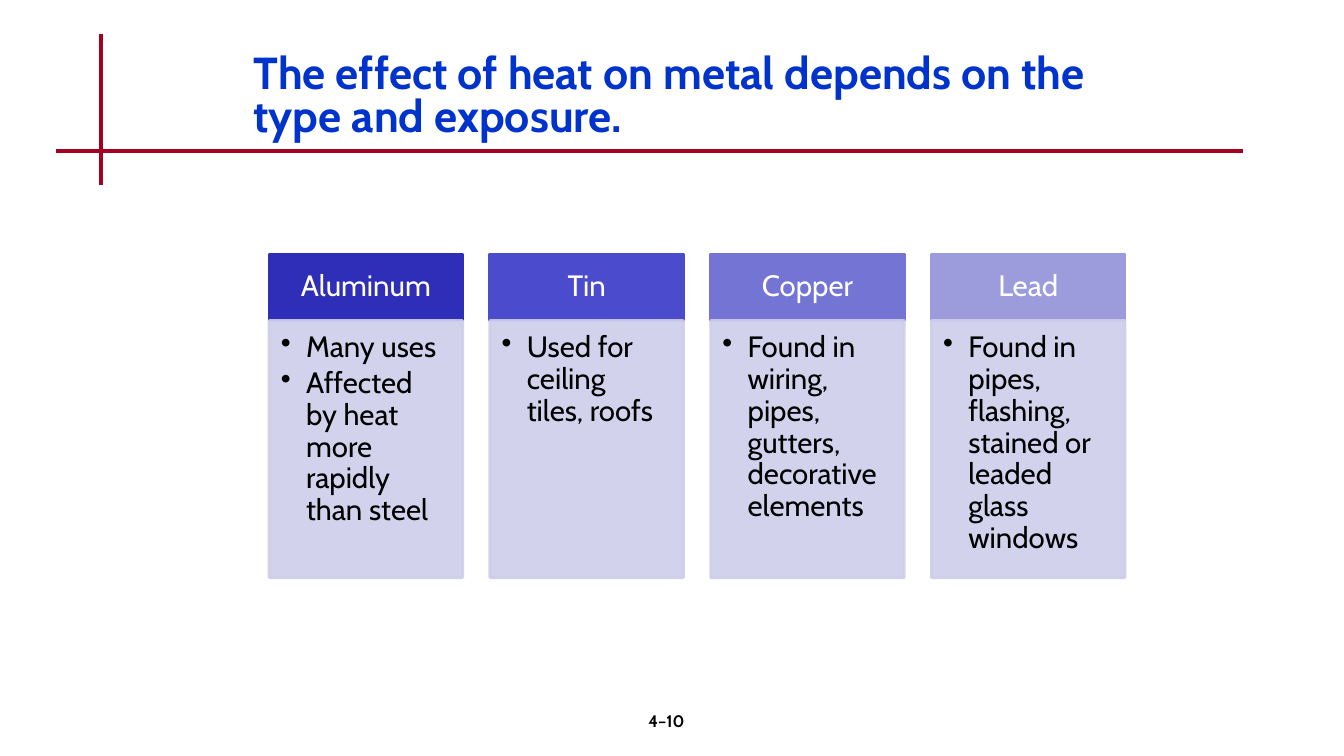
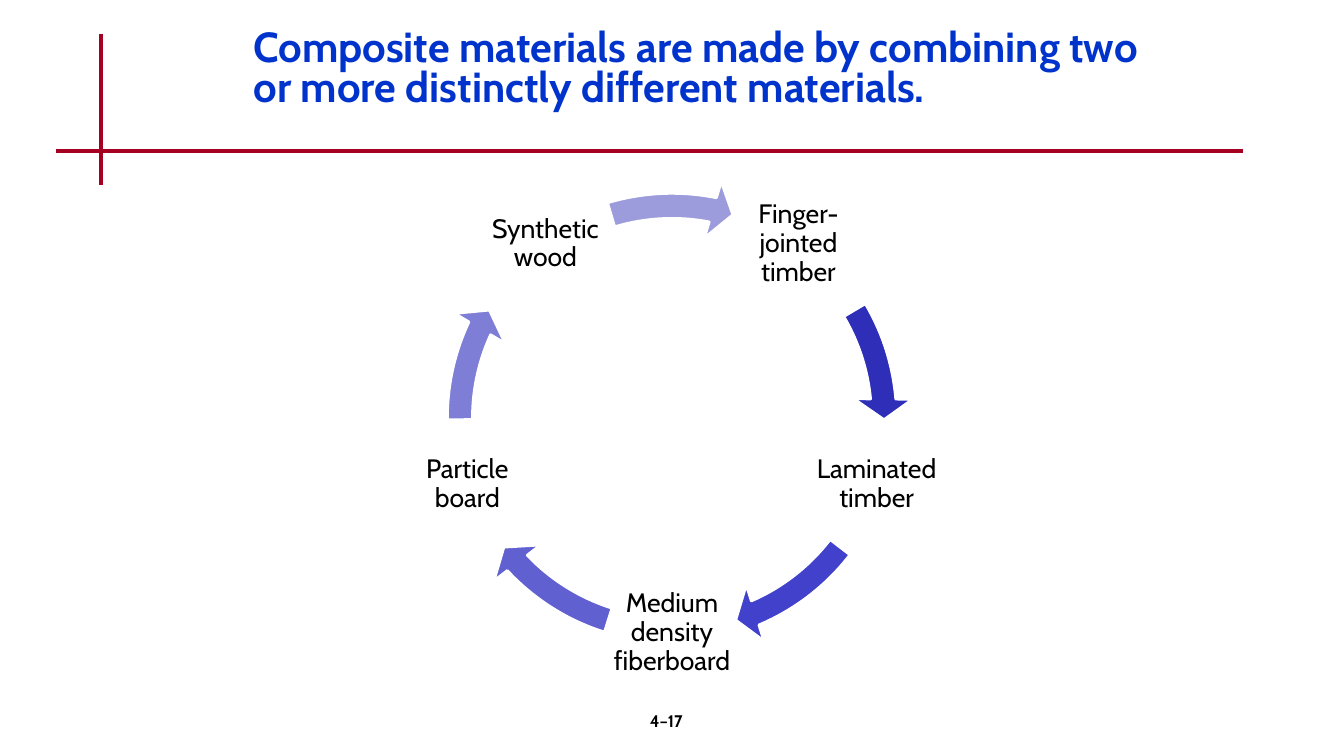
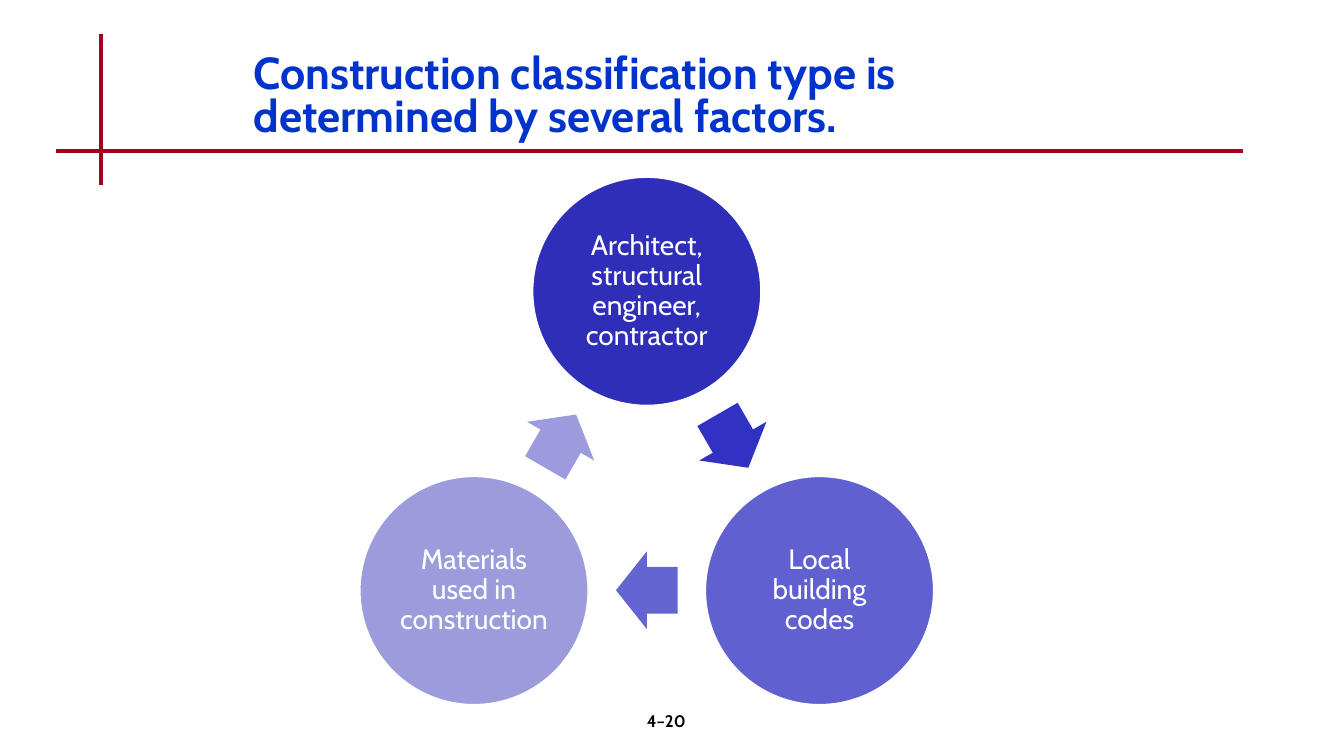
from dataclasses import dataclass
from math import cos, radians, sin

from lxml.etree import SubElement
from pptx import Presentation
from pptx.dml.color import RGBColor
from pptx.enum.shapes import MSO_CONNECTOR, MSO_SHAPE
from pptx.enum.text import MSO_ANCHOR, PP_ALIGN
from pptx.oxml.ns import qn
from pptx.presentation import Presentation as Deck
from pptx.shapes.autoshape import Shape
from pptx.slide import Slide
from pptx.util import Pt

FONT = "Cabin"
COLORS = {
    "title": "0033CC",
    "rule": "A50021",
    "black": "000000",
    "white": "FFFFFF",
    "panel": "CECEEC",
}


@dataclass(frozen=True)
class Box:
    left: float
    top: float
    width: float
    height: float


@dataclass(frozen=True)
class TextStyle:
    size: float
    color: str
    bold: bool = False
    align: PP_ALIGN = PP_ALIGN.CENTER
    anchor: MSO_ANCHOR = MSO_ANCHOR.MIDDLE
    spacing: float = 0.9
    insets: tuple[float, float, float, float] = (2.2, 2.2, 2.2, 2.2)
    bulleted: bool = False


@dataclass(frozen=True)
class Metal:
    name: str
    color: str
    facts: tuple[str, ...]


@dataclass(frozen=True)
class Material:
    name: str
    arrow_color: str
    arrow_start: float
    arrow_end: float


@dataclass(frozen=True)
class Factor:
    name: str
    color: str
    arrow_color: str


RULES = ((72, 24, 72, 132), (40, 108, 888, 108))
PAGE_NUMBER_BOX = Box(376, 504, 200, 36)
DEFAULT_INSETS = (7.2, 3.6, 7.2, 3.6)
PAGE_NUMBER_STYLE = TextStyle(12, COLORS["black"], True, anchor=MSO_ANCHOR.TOP,
                              spacing=1.0, insets=DEFAULT_INSETS)
HEADER_STYLE = TextStyle(21, COLORS["white"], insets=(11.5, 6.5, 11.5, 6.5))
FACTS_STYLE = TextStyle(21, COLORS["black"], align=PP_ALIGN.LEFT,
                        anchor=MSO_ANCHOR.TOP, insets=(8.4, 8.4, 11.5, 13),
                        bulleted=True)
MATERIAL_STYLE = TextStyle(19, COLORS["black"])
FACTOR_STYLE = TextStyle(20, COLORS["white"])

METALS = (
    Metal("Aluminum", "2E2EB9",
          ("Many uses", "Affected by heat more rapidly than steel")),
    Metal("Tin", "4B4BCD", ("Used for ceiling tiles, roofs",)),
    Metal("Copper", "7474D4",
          ("Found in wiring, pipes, gutters, decorative elements",)),
    Metal("Lead", "9C9CDD",
          ("Found in pipes, flashing, stained or leaded glass windows",)),
)
MATERIALS = (
    Material("Finger-jointed timber", "2E2EB9", 329.44, 354.89),
    Material("Laminated timber", "4141CB", 37.56, 66.91),
    Material("Medium density fiberboard", "6060D0", 107.49, 136.85),
    Material("Particle board", "7E7ED6", 179.51, 204.97),
    Material("Synthetic wood", "9C9CDD", 253.31, 281.1),
)
FACTORS = (
    Factor("Architect, structural engineer, contractor", "2E2EB9", "3131C3"),
    Factor("Local building codes", "6060D0", "6464D2"),
    Factor("Materials used in construction", "9C9CDD", "9B9BDD"),
)


def lengths(box: Box) -> tuple[Pt, Pt, Pt, Pt]:
    return Pt(box.left), Pt(box.top), Pt(box.width), Pt(box.height)


def box_on_circle(center: tuple[float, float], radius: float, angle: float,
                  width: float, height: float) -> Box:
    x = center[0] + radius * cos(radians(angle))
    y = center[1] + radius * sin(radians(angle))
    return Box(x - width / 2, y - height / 2, width, height)


def write(shape: Shape, text: str, style: TextStyle) -> None:
    frame = shape.text_frame
    frame.text = text
    frame.word_wrap = True
    frame.vertical_anchor = style.anchor
    (frame.margin_left, frame.margin_top,
     frame.margin_right, frame.margin_bottom) = map(Pt, style.insets)
    for paragraph in frame.paragraphs:
        if style.bulleted:
            add_bullet(paragraph)
            paragraph.space_after = Pt(3)
        paragraph.alignment = style.align
        paragraph.line_spacing = style.spacing
        for run in paragraph.runs:
            run.font.name = FONT
            run.font.size = Pt(style.size)
            run.font.bold = style.bold
            run.font.color.rgb = RGBColor.from_string(style.color)


def add_bullet(paragraph) -> None:
    properties = paragraph._p.get_or_add_pPr()
    properties.set("marL", str(Pt(18)))
    properties.set("indent", str(-Pt(18)))
    SubElement(properties, qn("a:buChar")).set("char", "•")


def add_text(slide: Slide, box: Box, text: str, style: TextStyle) -> None:
    write(slide.shapes.add_textbox(*lengths(box)), text, style)


def add_filled(slide: Slide, kind: MSO_SHAPE, box: Box, fill: str,
               line: str | None = None) -> Shape:
    shape = slide.shapes.add_shape(kind, *lengths(box))
    shape.shadow.inherit = False
    shape.fill.solid()
    shape.fill.fore_color.rgb = RGBColor.from_string(fill)
    if line is None:
        shape.line.fill.background()
    else:
        shape.line.color.rgb = RGBColor.from_string(line)
        shape.line.width = Pt(2)
    return shape


def set_opacity(shape: Shape, percent: int) -> None:
    for color in shape._element.spPr.iter(qn("a:srgbClr")):
        SubElement(color, qn("a:alpha")).set("val", str(percent * 1000))


def add_base_slide(presentation: Deck, title: str, title_box: Box,
                   title_size: float, page_number: str) -> Slide:
    slide = presentation.slides.add_slide(presentation.slide_layouts[6])
    for ends in RULES:
        rule = slide.shapes.add_connector(MSO_CONNECTOR.STRAIGHT, *map(Pt, ends))
        rule.line.color.rgb = RGBColor.from_string(COLORS["rule"])
        rule.line.width = Pt(3)
        SubElement(rule._element.spPr, qn("a:effectLst"))
    title_style = TextStyle(title_size, COLORS["title"], True, PP_ALIGN.LEFT,
                            MSO_ANCHOR.TOP, 0.8, DEFAULT_INSETS)
    add_text(slide, title_box, title, title_style)
    add_text(slide, PAGE_NUMBER_BOX, page_number, PAGE_NUMBER_STYLE)
    return slide


def draw_metals(slide: Slide) -> None:
    left, top, pitch, width = 192.25, 181.5, 157.7, 138.25
    header_height, body_height = 47.5, 183.6
    for index, metal in enumerate(METALS):
        column = left + index * pitch
        header = add_filled(slide, MSO_SHAPE.RECTANGLE,
                            Box(column, top, width, header_height),
                            metal.color, metal.color)
        write(header, metal.name, HEADER_STYLE)
        body = add_filled(slide, MSO_SHAPE.RECTANGLE,
                          Box(column, top + header_height, width, body_height),
                          COLORS["panel"], COLORS["panel"])
        set_opacity(body, 90)
        write(body, "\n".join(metal.facts), FACTS_STYLE)


def draw_materials(slide: Slide) -> None:
    center = (480, 298.5)
    label_size, ring_size = 92, 345
    ring = box_on_circle(center, 0, 0, ring_size, ring_size)
    for index, material in enumerate(MATERIALS):
        angle = -54 + index * 360 / len(MATERIALS)
        label = box_on_circle(center, 153.7, angle, label_size, label_size)
        add_text(slide, label, material.name, MATERIAL_STYLE)
        arrow = add_filled(slide, MSO_SHAPE.CIRCULAR_ARROW, ring,
                           material.arrow_color, COLORS["white"])
        degree = 60000 / 100000
        settings = (5.2 / 100, 5.6 * degree, material.arrow_end * degree,
                    material.arrow_start * degree, 6.1 / 100)
        for position, value in enumerate(settings):
            arrow.adjustments[position] = value


def draw_factors(slide: Slide) -> None:
    center = (462, 350.6)
    step = 360 / len(FACTORS)
    for index, factor in enumerate(FACTORS):
        angle = -90 + index * step
        circle = add_filled(slide, MSO_SHAPE.OVAL,
                            box_on_circle(center, 142.5, angle, 164, 164),
                            factor.color, COLORS["white"])
        write(circle, factor.name, FACTOR_STYLE)
        arrow = add_filled(slide, MSO_SHAPE.RIGHT_ARROW,
                           box_on_circle(center, 71, angle + step / 2, 44, 55.4),
                           factor.arrow_color)
        arrow.rotation = angle + step / 2 + 90
        arrow.adjustments[0] = 0.6
        arrow.adjustments[1] = 0.5


def main() -> None:
    presentation = Presentation()
    presentation.slide_width = Pt(960)
    presentation.slide_height = Pt(540)
    draw_metals(add_base_slide(
        presentation,
        "The effect of heat on metal depends on the type and exposure.",
        Box(174, 36, 612, 72), 32, "4–10"))
    draw_materials(add_base_slide(
        presentation,
        "Composite materials are made by combining two or more distinctly "
        "different materials.",
        Box(174, 18, 648, 72), 30, "4–17"))
    draw_factors(add_base_slide(
        presentation,
        "Construction classification type is determined by several factors.",
        Box(174, 36, 636, 72), 32, "4–20"))
    presentation.save("out.pptx")


if __name__ == "__main__":
    main()
